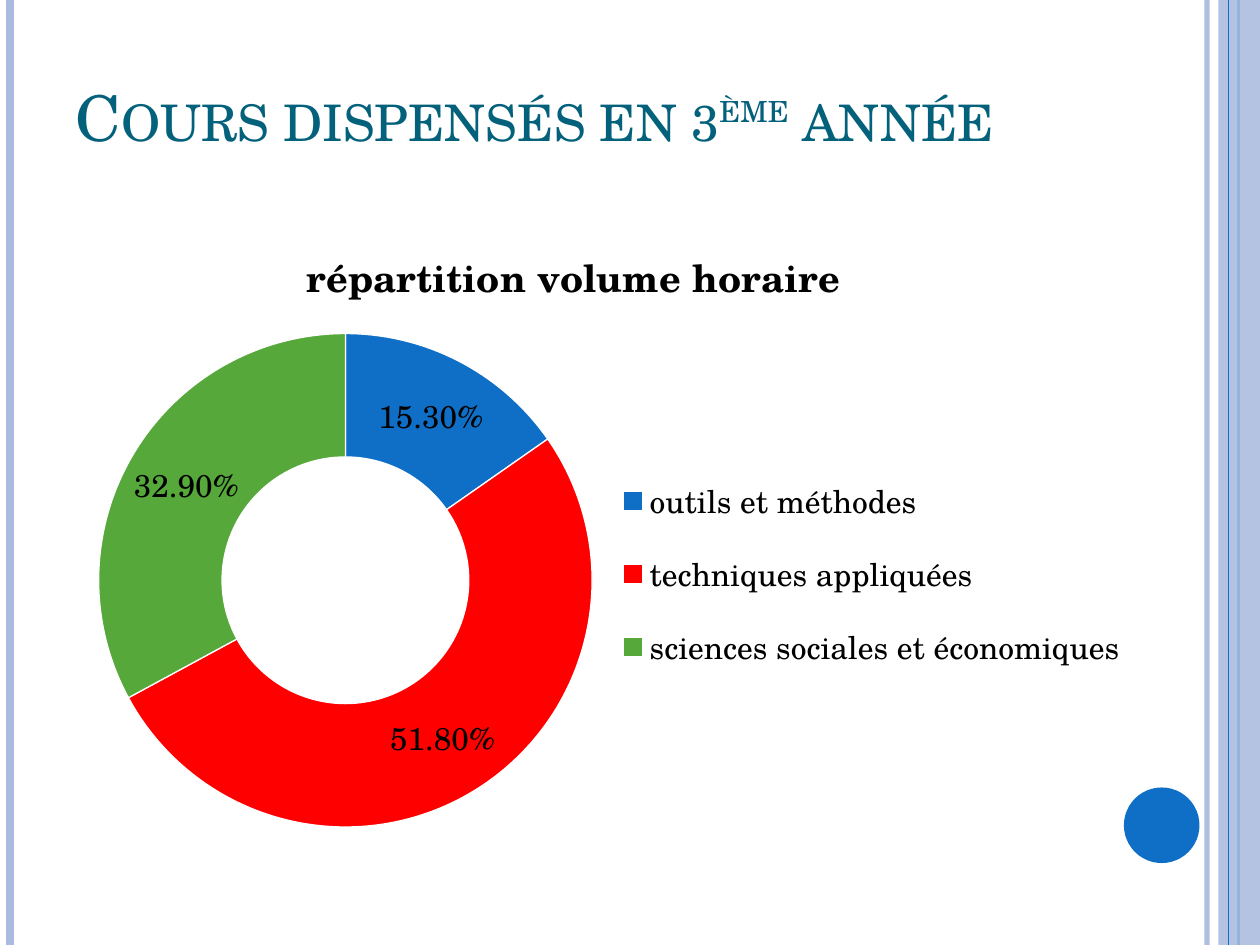
from lxml import etree
from pptx import Presentation
from pptx.chart.data import CategoryChartData
from pptx.dml.color import RGBColor
from pptx.enum import chart as ch, shapes, text
from pptx.oxml import parse_xml
from pptx.oxml.ns import nsdecls, qn
from pptx.util import Inches, Pt

FONT = "TeX Gyre Schola"
PALE = RGBColor(0xAB, 0xBB, 0xDF)
BLUE = RGBColor(0x0F, 0x6F, 0xC6)
TEAL = RGBColor(0x04, 0x61, 0x7B)
RED = RGBColor(0xFF, 0x00, 0x00)
GREEN = RGBColor(0x55, 0xA8, 0x39)
BLACK = RGBColor(0x00, 0x00, 0x00)
WHITE = RGBColor(0xFF, 0xFF, 0xFF)


def set_alpha(fill_parent, percent):
    color = next(fill_parent.iter(qn("a:srgbClr")))
    etree.SubElement(color, qn("a:alpha")).set("val", str(percent * 1000))


def add_rule(x, color, width):
    rule = slide.shapes.add_connector(
        shapes.MSO_CONNECTOR.STRAIGHT, Inches(x), 0, Inches(x), Inches(7.5))
    rule.line.color.rgb = color
    rule.line.width = Pt(width)
    etree.SubElement(rule._element.spPr, qn("a:effectLst"))
    return rule


prs = Presentation()
prs.slide_width, prs.slide_height = Inches(10), Inches(7.5)
slide = prs.slides.add_slide(prs.slide_layouts[5])

# Vertical rules and band along the edges
inner_rule = add_rule(9.58, PALE, 3)
set_alpha(inner_rule.line._ln, 93)
add_rule(0.08, PALE, 4.5)
add_rule(9.83, BLUE, 1.5)

band = slide.shapes.add_shape(
    shapes.MSO_SHAPE.RECTANGLE, Inches(9.67), 0, Inches(0.33), Inches(7.5))
disc = slide.shapes.add_shape(
    shapes.MSO_SHAPE.OVAL, Inches(8.92), Inches(6.25), Inches(0.6), Inches(0.6))
for ornament, color in ((band, PALE), (disc, BLUE)):
    ornament.shadow.inherit = False
    ornament.fill.solid()
    ornament.fill.fore_color.rgb = color
    ornament.line.fill.background()
set_alpha(band._element.spPr, 87)
add_rule(9.75, BLUE, 0.75)

# Title in small capitals with a raised ordinal
title = slide.shapes.title
title.left, title.top = Inches(0.5), Inches(0.3)
title.width, title.height = Inches(8.17), Inches(1.25)
title.text_frame.vertical_anchor = text.MSO_ANCHOR.MIDDLE
heading = title.text_frame.paragraphs[0]
heading.alignment = text.PP_ALIGN.LEFT
for words, baseline in (("Cours dispensés en 3", 0), ("ème", 30), (" année", 0)):
    run = heading.add_run()
    run.text = words
    run.font.name = FONT
    run.font.size = Pt(36)
    run.font.color.rgb = TEAL
    properties = run.font._element
    properties.set("cap", "small")
    if baseline:
        properties.set("baseline", str(baseline * 1000))

# Doughnut chart of teaching hours
hours = CategoryChartData(number_format="0.00%")
hours.categories = ["outils et méthodes", "techniques appliquées",
                    "sciences sociales et économiques"]
hours.add_series("Series 1", (0.153, 0.518, 0.329))
chart = slide.shapes.add_chart(
    ch.XL_CHART_TYPE.DOUGHNUT, 0, Inches(1.72), Inches(9.11), Inches(5.3), hours).chart
chart.font.name = FONT
chart.font.size = Pt(18)
chart.font.color.rgb = BLACK

chart.has_title = True
chart.chart_title.include_in_layout = False
caption = chart.chart_title.text_frame.paragraphs[0]
caption.text = "répartition volume horaire"
caption.font.name = FONT
caption.font.size = Pt(21.6)
caption.font.bold = True
caption.font.color.rgb = BLACK

chart.has_legend = True
chart.legend.position = ch.XL_LEGEND_POSITION.RIGHT
chart.legend.include_in_layout = False

ring = chart.plots[0]
ring.vary_by_categories = True
for index, color in enumerate((BLUE, RED, GREEN)):
    segment = ring.series[0].points[index].format
    segment.fill.solid()
    segment.fill.fore_color.rgb = color
    segment.line.color.rgb = WHITE
    segment.line.width = Pt(0.75)

labels = ring.series[0].data_labels
labels.show_value = True
labels.show_percentage = False
labels.number_format = "0.00%"
labels.number_format_is_linked = False
labels.font.name = FONT
labels.font.size = Pt(18)
labels.font.color.rgb = BLACK

# Fixed places of the ring and the legend, as fractions of the chart
plot_area = chart._chartSpace.chart.plotArea
legend = chart.legend._element
inner = '<c:layoutTarget val="inner"/>'
for part, index, target, box in (
        (plot_area, 0, inner, (0.086, 0.175, 0.43, 0.739)),
        (legend, 1, "", (0.534, 0.35, 0.451, 0.37))):
    for old_layout in part.findall(qn("c:layout")):
        part.remove(old_layout)
    place = target + '<c:xMode val="edge"/><c:yMode val="edge"/>' + "".join(
        f'<c:{side} val="{value}"/>' for side, value in zip("xywh", box))
    part.insert(index, parse_xml(
        f'<c:layout {nsdecls("c")}><c:manualLayout>{place}</c:manualLayout></c:layout>'))

prs.save("out.pptx")
